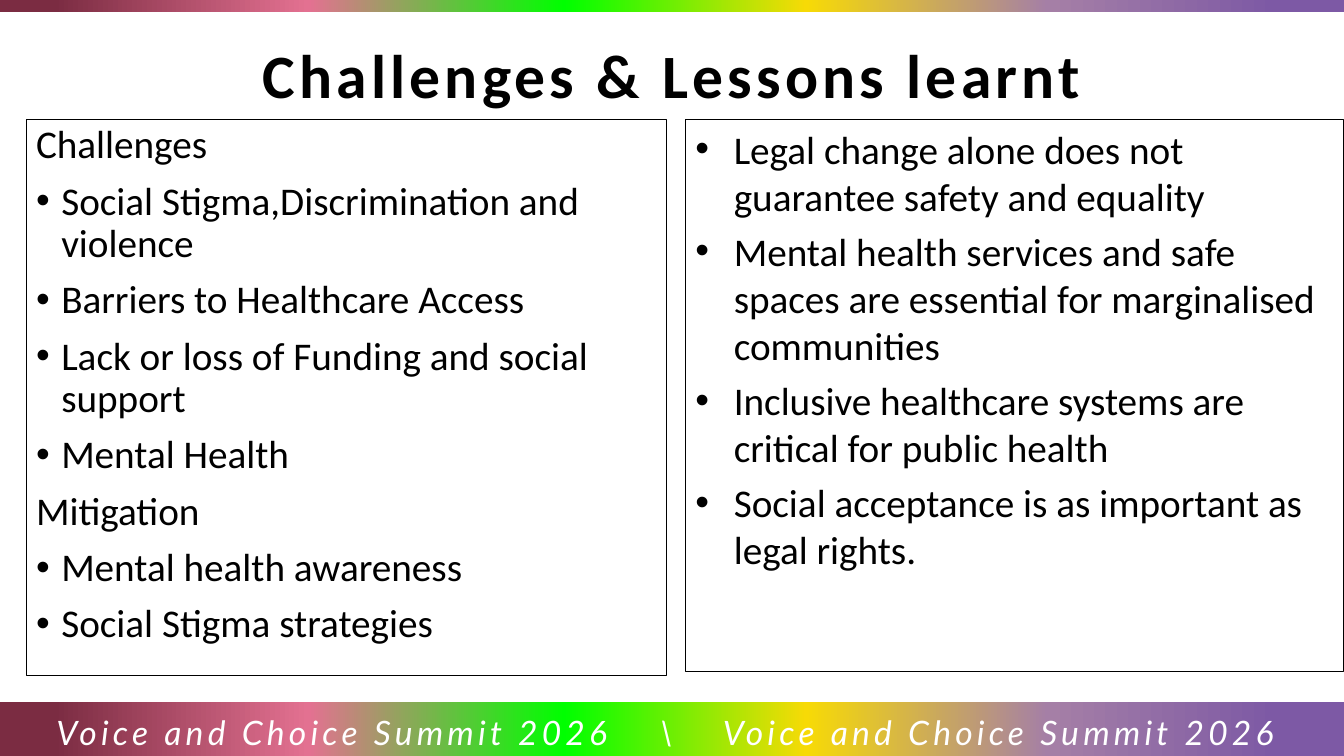
import pptx
import pptx.dml.color
import pptx.enum.shapes
import pptx.enum.text
import pptx.oxml
import pptx.oxml.ns
import pptx.util
from lxml import etree

ALIGN = pptx.enum.text.PP_ALIGN
ANCHOR = pptx.enum.text.MSO_ANCHOR
RECTANGLE = pptx.enum.shapes.MSO_SHAPE.RECTANGLE

RAINBOW = [(5, "7D59A5"), (22, "A57FA6"), (40, "F7DA06"),
           (58, "00FF00"), (77, "E37191"), (96, "7B2C42")]

CHALLENGES = ["Social Stigma,Discrimination and violence",
              "Barriers to Healthcare Access",
              "Lack or loss of Funding and social support",
              "Mental Health"]
MITIGATION = ["Mental health awareness", "Social Stigma strategies"]
LESSONS = ["Legal change alone does not guarantee safety and equality",
           "Mental health services and safe spaces are essential for marginalised communities",
           "Inclusive healthcare systems are critical for public health",
           "Social acceptance is as important as legal rights."]
SUMMIT = "Voice and Choice Summit 2026"


def color(value):
    return pptx.dml.color.RGBColor.from_string(value)


def add_child(parent, tag, **attributes):
    child = etree.SubElement(parent, pptx.oxml.ns.qn(tag))
    for name, value in attributes.items():
        child.set(name, str(value))
    return child


def write(paragraph, text, font="Calibri", size=28, ink="000000", bold=False, italic=False,
          spacing=0, align=ALIGN.LEFT, line=1.0, before=0, hang=0, tabs=()):
    """Fill a paragraph; hang (inches) adds a bullet, tabs are in inches, the rest in points."""
    paragraph.alignment = align
    paragraph.line_spacing = line
    paragraph.space_before = pptx.util.Pt(before)
    properties = paragraph._p.get_or_add_pPr()
    if hang:
        indent = pptx.util.Inches(hang)
        properties.set("marL", str(indent))
        properties.set("indent", str(-indent))
        add_child(properties, "a:buFont", typeface="Arial")
        add_child(properties, "a:buChar", char="•")
    if tabs:
        stops = add_child(properties, "a:tabLst")
        for stop in tabs:
            add_child(stops, "a:tab", pos=pptx.util.Inches(stop), algn="l")
    run = paragraph.add_run()
    run.text = text
    run.font.name = font
    run.font.size = pptx.util.Pt(size)
    run.font.bold = bold
    run.font.italic = italic
    run.font.color.rgb = color(ink)
    if spacing:
        run._r.get_or_add_rPr().set("spc", str(spacing * 100))


class SummitSlide:
    def __init__(self, deck):
        self.deck = deck
        self.slide = deck.slides.add_slide(deck.slide_layouts[5])

    def place(self, left, top, width, height):
        """Turn percentages of the slide into lengths."""
        wide, high = self.deck.slide_width, self.deck.slide_height
        return [int(share * whole / 100) for share, whole in
                zip((left, top, width, height), (wide, high, wide, high))]

    def rectangle(self, *area):
        shape = self.slide.shapes.add_shape(RECTANGLE, *self.place(*area))
        shape.shadow.inherit = False
        return shape

    def rainbow_bar(self, *area):
        bar = self.rectangle(*area)
        bar.line.fill.background()
        bar.fill.gradient()
        bar.fill.gradient_angle = 180
        stops = bar._element.spPr.find(".//" + pptx.oxml.ns.qn("a:gsLst"))
        for stop in list(stops):
            stops.remove(stop)
        for percent, value in RAINBOW:
            stop = add_child(stops, "a:gs", pos=percent * 1000)
            add_child(stop, "a:srgbClr", val=value)

    def title(self, text, *area):
        heading = self.slide.shapes.title
        heading.left, heading.top, heading.width, heading.height = self.place(*area)
        heading.text_frame.vertical_anchor = ANCHOR.MIDDLE
        write(heading.text_frame.paragraphs[0], text, size=44, bold=True, spacing=3,
              align=ALIGN.CENTER)

    def panel(self, entries, *area, before, line=1.0):
        """Outlined box of (text, hang) entries."""
        box = self.rectangle(*area)
        box.fill.background()
        box.line.color.rgb = color("000000")
        box.line.width = pptx.util.Pt(0.75)
        frame = box.text_frame
        frame.word_wrap = True
        frame.vertical_anchor = ANCHOR.TOP
        for number, (text, hang) in enumerate(entries):
            paragraph = frame.add_paragraph() if number else frame.paragraphs[0]
            write(paragraph, text, hang=hang, line=line, before=before if number else 0)

    def footer(self, text, *area, inset, tabs):
        frame = self.slide.shapes.add_textbox(*self.place(*area)).text_frame
        frame.word_wrap = True
        frame.margin_left = pptx.util.Inches(inset)
        write(frame.paragraphs[0], text, font="Lato", size=24, ink="FFFFFF", italic=True,
              spacing=3, line=1.07, tabs=tabs)


def main():
    deck = pptx.Presentation()
    deck.slide_width = pptx.util.Inches(13.33)
    deck.slide_height = pptx.util.Inches(7.5)

    summit = SummitSlide(deck)
    summit.rainbow_bar(0, 0, 100, 1.6)
    summit.rainbow_bar(0, 92.8, 100, 7.6)
    summit.title("Challenges & Lessons learnt", 0, 3.6, 100, 12.27)

    challenges = [("Challenges", 0), *((text, 0.25) for text in CHALLENGES),
                  ("Mitigation", 0), *((text, 0.25) for text in MITIGATION)]
    lessons = [(text, 0.38) for text in LESSONS]
    summit.panel(lessons, 51.01, 15.87, 48.99, 72.93, before=5.6)
    summit.panel(challenges, 1.95, 15.87, 47.64, 73.47, before=10, line=0.9)

    summit.footer(f"{SUMMIT}\t\\\t{SUMMIT}", 0, 93.2, 100, 6.53,
                  inset=0.56, tabs=(5.98, 6.61))
    deck.save("out.pptx")


if __name__ == "__main__":
    main()
